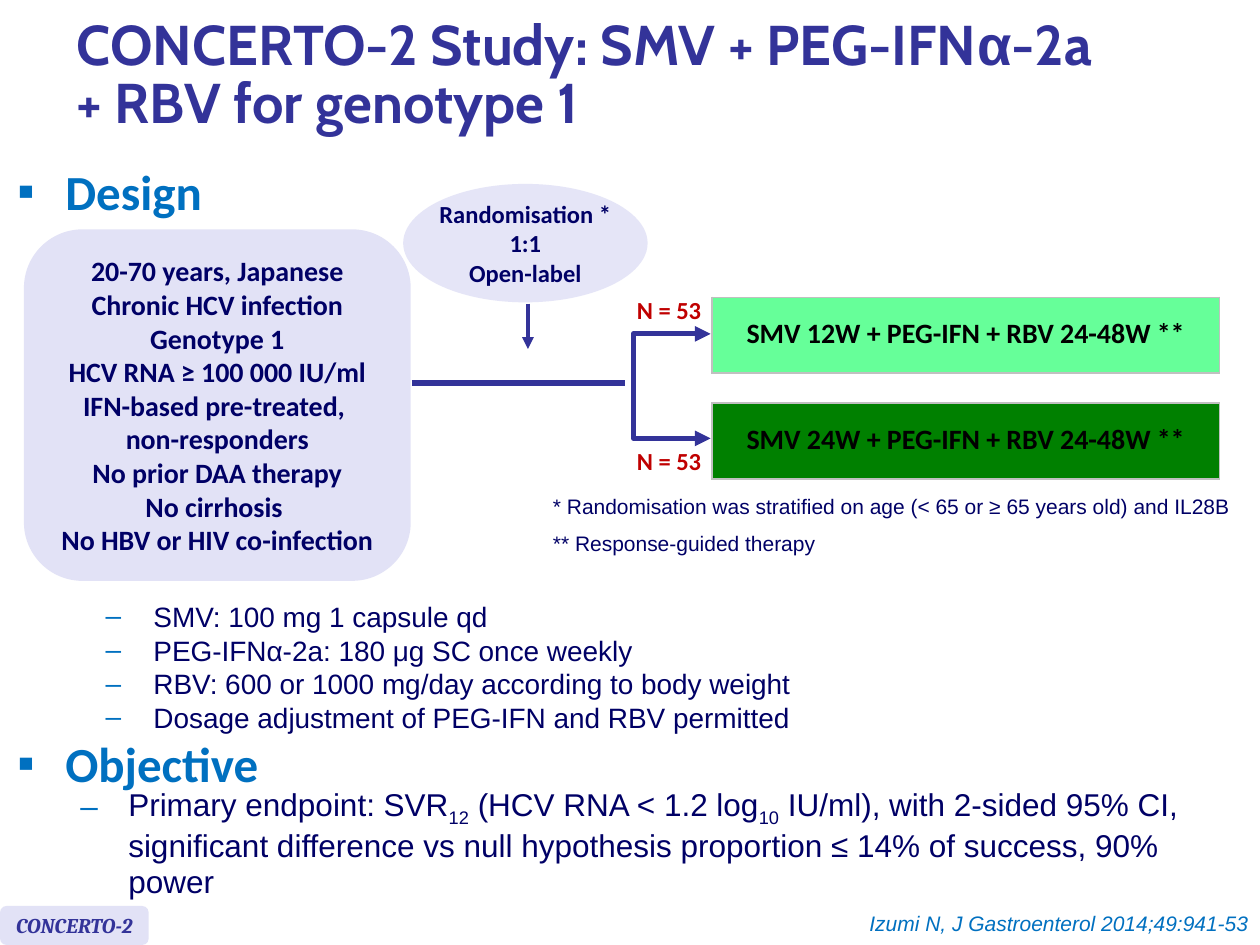
from dataclasses import dataclass

from lxml.etree import SubElement
from pptx import Presentation
from pptx.dml.color import RGBColor
from pptx.enum.shapes import MSO_CONNECTOR, MSO_SHAPE
from pptx.enum.text import MSO_ANCHOR, PP_ALIGN
from pptx.oxml.ns import qn
from pptx.util import Inches, Pt

INK = {
    "navy": "000066", "indigo": "333399", "blue": "0070C0", "red": "C00000",
    "black": "000000", "lilac": "E2E2F6", "pale": "E5E5F7", "grey": "C0C0C0",
    "mint": "66FF99", "green": "008000",
}
HEAD = {"face": "Calibri", "size": 28, "color": "blue", "bold": True}
CARD = {"face": "Calibri", "size": 16, "bold": True, "align": PP_ALIGN.CENTER}
NOTE = {"size": 12}

deck = Presentation()
deck.slide_width, deck.slide_height = Inches(10), Inches(7.5)
COL, ROW = deck.slide_width / 100, deck.slide_height / 75
slide = deck.slides.add_slide(deck.slide_layouts[6])
shapes = slide.shapes


@dataclass
class Box:
    """A place on the grid of 100 columns and 75 rows."""
    col: float
    row: float
    wide: float
    high: float

    def emu(self) -> tuple[int, int, int, int]:
        return (round(self.col * COL), round(self.row * ROW),
                round(self.wide * COL), round(self.high * ROW))


@dataclass
class Arm:
    """One treatment group of the trial."""
    label: str
    fill: str
    row: float
    count: float


@dataclass
class Mark:
    """A bullet, with its text indent in inches."""
    sign: str
    left: float
    level: int = 0


SQUARE, DASH = Mark("▪", 0.38), Mark("–", 0.88, 1)


def rgb(name: str) -> RGBColor:
    return RGBColor.from_string(INK[name])


def add_mark(para, mark: Mark) -> None:
    para.level = mark.level
    props = para._p.get_or_add_pPr()
    props.set("marL", str(Inches(mark.left)))
    props.set("indent", str(-Inches(0.38)))
    tint = SubElement(props, qn("a:buClr"))
    SubElement(tint, qn("a:srgbClr"), val=INK["blue"])
    SubElement(props, qn("a:buFont"), typeface="Arial")
    SubElement(props, qn("a:buChar"), char=mark.sign)


def write(frame, lines, *, face="Arial", size=16, color="navy", bold=False,
          italic=False, align=PP_ALIGN.LEFT, space=None, mark=None) -> None:
    """Add lines; a line is a string or a list of (text, run format) pairs."""
    for line in lines:
        first = frame.paragraphs[0]
        para = frame.add_paragraph() if first.runs else first
        para.alignment = align
        if space:
            para.line_spacing = space
        if mark:
            add_mark(para, mark)
        for text, extra in [(line, {})] if isinstance(line, str) else line:
            for turn, part in enumerate(text.split("\n")):
                if turn:
                    para.add_line_break()
                run = para.add_run()
                run.text = part
                font = run.font
                font.name, font.size = extra.get("face", face), Pt(size)
                font.bold, font.italic = bold, italic
                font.color.rgb = rgb(color)
                if "base" in extra:
                    font._element.set("baseline", str(extra["base"] * 1000))


def add_text(box: Box, lines, wrap=True, anchor=MSO_ANCHOR.TOP, **look):
    frame = shapes.add_textbox(*box.emu()).text_frame
    frame.word_wrap, frame.vertical_anchor = wrap, anchor
    write(frame, lines, **look)
    return frame


def add_card(kind, box: Box, fill: str, lines, wrap=False, inset=True, **look) -> None:
    card = shapes.add_shape(kind, *box.emu())
    card.shadow.inherit = False
    card.fill.solid()
    card.fill.fore_color.rgb = rgb(fill)
    card.line.fill.background()
    frame = card.text_frame
    frame.word_wrap, frame.vertical_anchor = wrap, MSO_ANCHOR.MIDDLE
    if not inset:
        frame.margin_left = frame.margin_right = 0
        frame.margin_top = frame.margin_bottom = 0
    write(frame, lines, **look)


def ink_line(line, width: float, ends=()) -> None:
    line.color.rgb = rgb("indigo")
    line.width = Pt(width)
    for end in ends:
        SubElement(line._get_or_add_ln(), qn(f"a:{end}"), type="triangle")


def add_line(x1: float, y1: float, x2: float, y2: float, width: float, ends=()) -> None:
    link = shapes.add_connector(
        MSO_CONNECTOR.STRAIGHT, round(x1 * COL), round(y1 * ROW),
        round(x2 * COL), round(y2 * ROW))
    ink_line(link.line, width, ends)
    SubElement(link._element.spPr, qn("a:effectLst"))


def add_fork(stem: float, tip: float, top: float, low: float) -> None:
    """Draw the bracket that splits the patients into the two arms."""
    pen = shapes.build_freeform(round(tip * COL), round(top * ROW))
    turns = [(stem, top), (stem, low), (tip, low)]
    pen.add_line_segments([(round(x * COL), round(y * ROW)) for x, y in turns], close=False)
    fork = pen.convert_to_shape()
    fork.shadow.inherit = False
    fork.fill.background()
    ink_line(fork.line, 3, ("headEnd", "tailEnd"))


def add_arm(arm: Arm) -> None:
    table = shapes.add_table(1, 1, *Box(56.5, arm.row, 40.3, 6).emu()).table
    table.first_row = table.horz_banding = False
    cell = table.cell(0, 0)
    cell.vertical_anchor = MSO_ANCHOR.MIDDLE
    write(cell.text_frame, [arm.label], color="black", space=0.8, **CARD)
    props = cell._tc.get_or_add_tcPr()
    for side in ("lnL", "lnR", "lnT", "lnB"):
        edge = SubElement(props, qn(f"a:{side}"), w=str(Pt(1)))
        fill = SubElement(edge, qn("a:solidFill"))
        SubElement(fill, qn("a:srgbClr"), val=INK["grey"])
    cell.fill.solid()
    cell.fill.fore_color.rgb = rgb(arm.fill)
    add_text(Box(49.5, arm.count, 7.2, 3.4), ["N = 53"], wrap=False,
             **CARD | {"size": 14, "color": "red"})


ARMS = [
    Arm("SMV 12W + PEG-IFN + RBV 24-48W **", "mint", 23.6, 22.9),
    Arm("SMV 24W + PEG-IFN + RBV 24-48W **", "green", 32, 34.9),
]

add_text(Box(5.1, 0.8, 91.3, 10.7),
         [[("CONCERTO-2 Study: SMV + PEG-IFN", {}), ("α", {"face": "Arial"}),
           ("-2a \n+ RBV for genotype 1", {})]],
         anchor=MSO_ANCHOR.MIDDLE, face="Cabin", size=32, color="indigo",
         bold=True, space=0.85)
add_text(Box(0.4, 12.3, 19.8, 6.3), ["Design"], mark=SQUARE, **HEAD)

add_card(MSO_SHAPE.OVAL, Box(32, 14.6, 19.4, 9.4), "pale",
         ["Randomisation *", "1:1", "Open-label"], inset=False, **CARD | {"size": 14})
add_card(MSO_SHAPE.ROUNDED_RECTANGLE, Box(1.9, 18.2, 30.7, 27.9), "lilac",
         ["20-70 years, Japanese", "Chronic HCV infection", "Genotype 1",
          "HCV RNA ≥ 100 000 IU/ml", "IFN-based pre-treated, \nnon-responders",
          "No prior DAA therapy", "No cirrhosis ", "No HBV or HIV co-infection"],
         wrap=True, **CARD)
add_line(41.9, 24.1, 41.9, 27.7, 2.25, ("tailEnd",))
add_line(32.7, 30.4, 49.6, 30.4, 3)
add_fork(50.3, 56.4, 26.5, 34.8)
for arm in ARMS:
    add_arm(arm)

add_text(Box(42.9, 38.7, 56.7, 3),
         ["* Randomisation was stratified on age (< 65 or ≥ 65 years old) and IL28B"], **NOTE)
add_text(Box(42.9, 41.6, 23.9, 3), ["** Response-guided therapy"], wrap=False, **NOTE)

add_text(Box(2.4, 47.1, 94.7, 12.1),
         ["SMV: 100 mg 1 capsule qd", "PEG-IFNα-2a: 180 μg SC once weekly",
          "RBV: 600 or 1000 mg/day according to body weight",
          "Dosage adjustment of PEG-IFN and RBV permitted"], mark=DASH)
goal = add_text(Box(0.4, 59.5, 99.6, 10.4), ["Objective"],
                mark=SQUARE, space=Pt(20.6), **HEAD)
LOW = {"base": -25}
write(goal, [[("Primary endpoint: SVR", {}), ("12", LOW), (" (HCV RNA < 1.2 log", {}),
              ("10", LOW),
              (" IU/ml), with 2-sided 95% CI, significant difference vs null hypothesis "
               "proportion ≤ 14% of success, 90% power", {})]],
      size=18, mark=DASH, space=Pt(20.6))

add_card(MSO_SHAPE.ROUNDED_RECTANGLE, Box(0, 71.9, 11.8, 3.1), "lilac", ["CONCERTO-2"],
         face="Cambria", color="indigo", italic=True, bold=True,
         align=PP_ALIGN.CENTER, **NOTE)
add_text(Box(66.8, 71.8, 33.3, 3), ["Izumi N, J Gastroenterol 2014;49:941-53"], wrap=False,
         color="blue", italic=True, align=PP_ALIGN.RIGHT, **NOTE)

deck.save("out.pptx")
